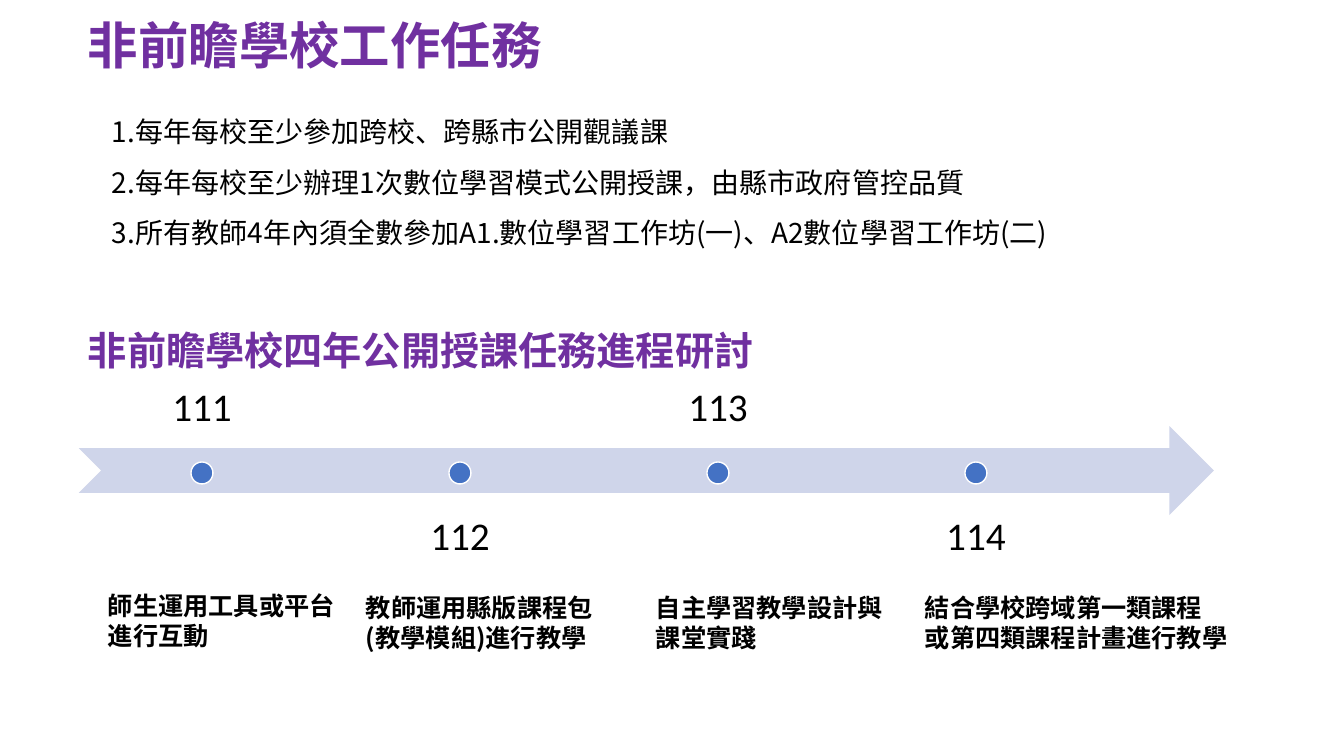
from pptx import Presentation
from pptx.dml.color import RGBColor
from pptx.enum.shapes import MSO_SHAPE
from pptx.enum.text import MSO_ANCHOR, PP_ALIGN
from pptx.oxml.ns import qn
from pptx.util import Pt
from lxml.etree import SubElement

SCALE = 914400 / 100.8
WIDE, HIGH = 1344, 756
CJK, LATIN = "Noto Sans CJK SC", "Calibri"
PURPLE, BLACK, WHITE = "7030A0", "000000", "FFFFFF"
BLUE, PALE = "4472C4", "CFD5EA"

TITLE = "非前瞻學校工作任務"
TASKS = [
    "1.每年每校至少參加跨校、跨縣市公開觀議課",
    "2.每年每校至少辦理1次數位學習模式公開授課，由縣市政府管控品質",
    "3.所有教師4年內須全數參加A1.數位學習工作坊(一)、A2數位學習工作坊(二)",
]
HEADING = "非前瞻學校四年公開授課任務進程研討"
YEARS = ["111", "112", "113", "114"]
# left, top, width, height, lines
NOTES = [
    (98, 585, 249, 72, ["師生運用工具或平台", "進行互動"]),
    (356, 587, 249, 72, ["教師運用縣版課程包", "(教學模組)進行教學"]),
    (646, 587, 249, 72, ["自主學習教學設計與", "課堂實踐"]),
    (915, 587, 326, 102, ["結合學校跨域第一類課程", "或第四類課程計畫進行教學"]),
]

ARROW = (79, 426, 1135, 89)
FIRST, STEP, DOT = 202, 258, 22  # first dot centre, pitch, diameter
DOT_TOP = 462
YEAR_W, YEAR_H = 246, 89
ABOVE, BELOW = 362, 495


def px(*nums):
    return [round(n * SCALE) for n in nums]


def color(code):
    return RGBColor.from_string(code)


def add_text(slide, box, lines, size, font=CJK, ink=BLACK, bold=False,
             align=PP_ALIGN.LEFT, anchor=MSO_ANCHOR.TOP, space=1.0, pad=None):
    frame = slide.shapes.add_textbox(*px(*box)).text_frame
    frame.word_wrap = True
    frame.vertical_anchor = anchor
    if pad is not None:
        frame.margin_left = frame.margin_right = px(pad)[0]
        frame.margin_top = frame.margin_bottom = px(pad)[0]
    for i, line in enumerate(lines):
        para = frame.add_paragraph() if i else frame.paragraphs[0]
        para.alignment = align
        para.line_spacing = space
        run = para.add_run()
        run.text = line
        run.font.size = Pt(size)
        run.font.bold = bold
        run.font.color.rgb = color(ink)
        run.font.name = font
        SubElement(run.font._element, qn("a:ea")).set("typeface", font)


def add_shape(slide, kind, box, fill, line=None):
    shape = slide.shapes.add_shape(kind, *px(*box))
    shape.shadow.inherit = False
    shape.fill.solid()
    shape.fill.fore_color.rgb = color(fill)
    if line:
        shape.line.color.rgb = color(line)
        shape.line.width = Pt(1)
    else:
        shape.line.fill.background()


def add_years(slide):
    add_shape(slide, MSO_SHAPE.NOTCHED_RIGHT_ARROW, ARROW, PALE)
    for i, year in enumerate(YEARS):
        mid = FIRST + i * STEP
        low = i % 2
        box = (mid - YEAR_W / 2, BELOW if low else ABOVE, YEAR_W, YEAR_H)
        add_text(slide, box, [year], 28, font=LATIN, align=PP_ALIGN.CENTER,
                 anchor=MSO_ANCHOR.TOP if low else MSO_ANCHOR.BOTTOM,
                 space=0.9, pad=22)
        add_shape(slide, MSO_SHAPE.OVAL, (mid - DOT / 2, DOT_TOP, DOT, DOT),
                  BLUE, WHITE)


def main():
    deck = Presentation()
    deck.slide_width, deck.slide_height = px(WIDE, HIGH)
    slide = deck.slides.add_slide(deck.slide_layouts[6])
    add_text(slide, (78, 9, 479, 72), [TITLE], 36, ink=PURPLE, bold=True)
    add_text(slide, (102, 93, 1066, 163), TASKS, 20, space=1.5)
    add_text(slide, (78, 321, 693, 57), [HEADING], 28, ink=PURPLE, bold=True)
    add_years(slide)
    for *box, lines in NOTES:
        add_text(slide, box, lines, 18, bold=True)
    deck.save("out.pptx")


if __name__ == "__main__":
    main()
